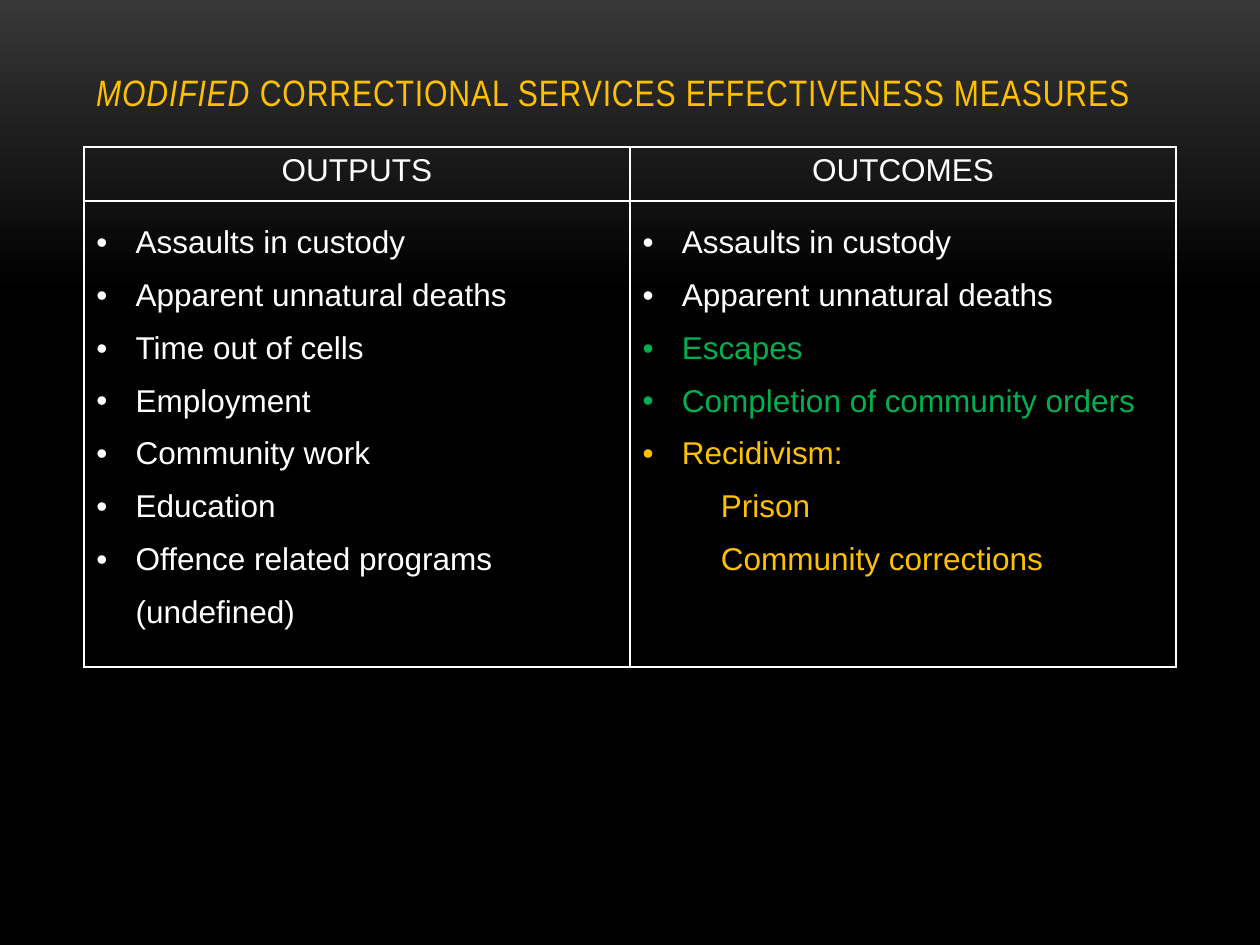
from lxml.etree import SubElement
from pptx import Presentation
from pptx.dml.color import RGBColor
from pptx.enum.text import MSO_ANCHOR, PP_ALIGN
from pptx.oxml.ns import qn
from pptx.util import Cm, Pt

WHITE = RGBColor(0xFF, 0xFF, 0xFF)
BLACK = RGBColor(0x00, 0x00, 0x00)
CHARCOAL = RGBColor(0x38, 0x38, 0x38)
AMBER = RGBColor(0xFF, 0xC0, 0x00)
GREEN = RGBColor(0x00, 0xB0, 0x50)

HANGING = 0.79
SUB_INDENT = 1.58

OUTPUTS = [
    ("Assaults in custody", {}),
    ("Apparent unnatural deaths", {}),
    ("Time out of cells", {}),
    ("Employment", {}),
    ("Community work", {}),
    ("Education", {}),
    ("Offence related programs (undefined)", {}),
]
OUTCOMES = [
    ("Assaults in custody", {}),
    ("Apparent unnatural deaths", {}),
    ("Escapes", {"color": GREEN}),
    ("Completion of community orders", {"color": GREEN}),
    ("Recidivism:", {"color": AMBER}),
    ("Prison", {"color": AMBER, "bullet": False}),
    ("Community corrections", {"color": AMBER, "bullet": False}),
]


def add_span(para, text, font="Arial", size=18, color=WHITE, italic=False, tracking=0):
    span = para.add_run()
    span.text = text
    span.font.name = font
    span.font.size = Pt(size)
    span.font.color.rgb = color
    span.font.italic = italic
    span.font.bold = False
    if tracking:
        span.font._element.set("spc", str(int(tracking * 100)))


def set_indent(para, left, first=0, bullet=False):
    properties = para._p.get_or_add_pPr()
    properties.set("marL", str(Cm(left)))
    properties.set("indent", str(Cm(first)))
    if bullet:
        SubElement(properties, qn("a:buFont")).set("typeface", "Arial")
        SubElement(properties, qn("a:buChar")).set("char", "•")
    else:
        SubElement(properties, qn("a:buNone"))


def style_cell(cell):
    properties = cell._tc.get_or_add_tcPr()
    for side in ("lnL", "lnR", "lnT", "lnB"):
        border = SubElement(properties, qn(f"a:{side}"), w=str(Pt(1)))
        fill = SubElement(border, qn("a:solidFill"))
        SubElement(fill, qn("a:srgbClr"), val=str(WHITE))
    cell.fill.background()
    cell.vertical_anchor = MSO_ANCHOR.TOP


def fill_list(cell, items):
    frame = cell.text_frame
    for index, (text, options) in enumerate(items):
        para = frame.add_paragraph() if index else frame.paragraphs[0]
        if options.get("bullet", True):
            set_indent(para, HANGING, -HANGING, bullet=True)
        else:
            set_indent(para, SUB_INDENT)
        para.line_spacing = 1.5
        add_span(para, text, color=options.get("color", WHITE))


def paint_background(page):
    fill = page.background.fill
    fill.gradient()
    fill.gradient_angle = 270
    stops = zip(fill.gradient_stops, (0, 0.31), (CHARCOAL, BLACK))
    for stop, position, color in stops:
        stop.position = position
        stop.color.rgb = color


def add_title(page, left, top, width, height):
    box = page.shapes.add_textbox(left, top, width, height)
    frame = box.text_frame
    frame.word_wrap = True
    frame.vertical_anchor = MSO_ANCHOR.BOTTOM
    para = frame.paragraphs[0]
    style = {"font": "Arial Narrow", "size": 21, "color": AMBER, "tracking": 0.5}
    add_span(para, "MODIFIED", italic=True, **style)
    add_span(para, " CORRECTIONAL SERVICES EFFECTIVENESS MEASURES", **style)


def add_measures(page, left, top, width, height):
    header_height = Cm(1.09)
    table = page.shapes.add_table(2, 2, left, top, width, height).table
    table.first_row = False
    table.horz_banding = False
    table.rows[0].height = header_height
    table.rows[1].height = height - header_height
    columns = (("OUTPUTS", OUTPUTS), ("OUTCOMES", OUTCOMES))
    for index, (heading, items) in enumerate(columns):
        header, body = table.cell(0, index), table.cell(1, index)
        style_cell(header)
        style_cell(body)
        para = header.text_frame.paragraphs[0]
        para.alignment = PP_ALIGN.CENTER
        add_span(para, heading)
        fill_list(body, items)


def main():
    deck = Presentation()
    deck.slide_width = Cm(25.4)
    deck.slide_height = Cm(19.05)
    page = deck.slides.add_slide(deck.slide_layouts[6])
    margin = Cm(1.69)
    width = deck.slide_width - 2 * margin
    paint_background(page)
    add_title(page, margin, Cm(0.64), width, Cm(1.78))
    add_measures(page, margin, Cm(2.96), width, Cm(10.49))
    deck.save("out.pptx")


if __name__ == "__main__":
    main()
